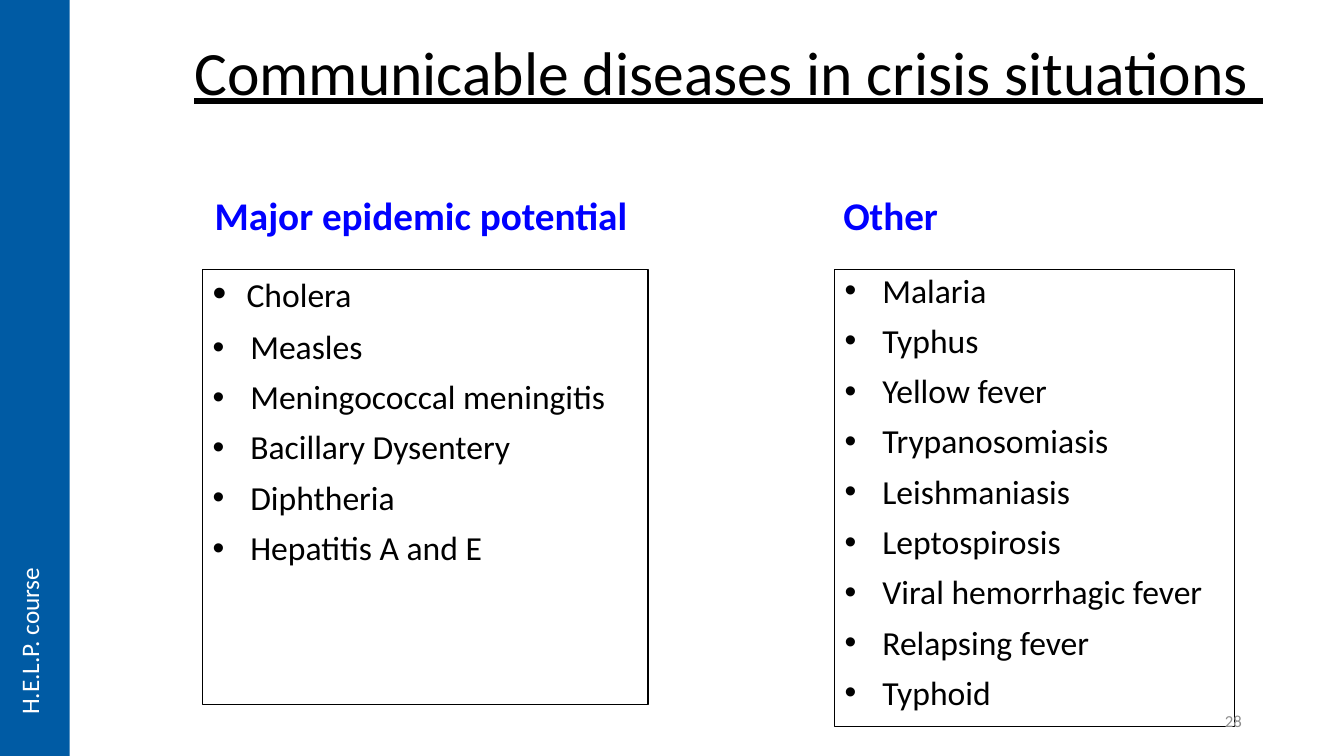
from dataclasses import dataclass

from lxml.etree import SubElement
from pptx import Presentation
from pptx.dml.color import RGBColor
from pptx.enum.shapes import MSO_SHAPE as Shape
from pptx.enum.text import MSO_ANCHOR as Anchor, PP_ALIGN as Align
from pptx.oxml.ns import qn
from pptx.util import Pt


@dataclass(frozen=True)
class Theme:
    font: str = "Calibri"
    black: RGBColor = RGBColor(0, 0, 0)
    heading_blue: RGBColor = RGBColor(0, 0, 255)
    band_blue: RGBColor = RGBColor(0, 0x5B, 0xA4)
    white: RGBColor = RGBColor(255, 255, 255)
    gray: RGBColor = RGBColor(0x8C, 0x8C, 0x8C)
    title: int = 44
    heading: int = 28
    item: int = 24
    band: int = 18
    number: int = 12


THEME = Theme()
PAGE_WIDTH, PAGE_HEIGHT = 960, 540
HEADING_TOP, HEADING_WIDTH, HEADING_HEIGHT = 123.8, 318.2, 50.4
LIST_TOP = 192.2
EPIDEMIC = ["Cholera", "Measles", "Meningococcal meningitis", "Bacillary Dysentery",
            "Diphtheria", "Hepatitis A and E"]
OTHER = ["Malaria", "Typhus", "Yellow fever", "Trypanosomiasis", "Leishmaniasis",
         "Leptospirosis", "Viral hemorrhagic fever", "Relapsing fever", "Typhoid"]


def style(font, size, color):
    font.name = THEME.font
    font.size = Pt(size)
    font.color.rgb = color


def add_text(page, box, text, size, color, align=Align.LEFT, anchor=Anchor.MIDDLE):
    """Add one line of text in box (left, top, width, height) and return its frame."""
    frame = page.shapes.add_textbox(*map(Pt, box)).text_frame
    frame.word_wrap = True
    frame.vertical_anchor = anchor
    frame.text = text
    para = frame.paragraphs[0]
    para.alignment = align
    style(para.runs[0].font, size, color)
    return frame


def add_rectangle(page, box):
    rectangle = page.shapes.add_shape(Shape.RECTANGLE, *map(Pt, box))
    rectangle.shadow.inherit = False
    return rectangle


def add_bullet(para, indent):
    properties = para._p.get_or_add_pPr()
    properties.set("marL", str(Pt(indent)))
    properties.set("indent", str(-Pt(indent)))
    SubElement(properties, qn("a:buFont")).set("typeface", "Arial")
    SubElement(properties, qn("a:buChar")).set("char", "•")


def add_title(page, box):
    frame = add_text(page, box, "Communicable diseases in crisis situations ",
                     THEME.title, THEME.black)
    frame.paragraphs[0].line_spacing = 0.9
    frame.paragraphs[0].runs[0].font.underline = True


def add_heading(page, box, text):
    frame = add_text(page, box, text, THEME.heading, THEME.heading_blue,
                     Align.CENTER, Anchor.BOTTOM)
    frame.paragraphs[0].line_spacing = 0.9
    frame.paragraphs[0].runs[0].font.bold = True


def add_disease_list(page, box, diseases, large_first=False):
    """Add a framed bullet list; large_first enlarges the first bullet."""
    panel = add_rectangle(page, box)
    panel.fill.background()
    panel.line.color.rgb = THEME.black
    panel.line.width = Pt(0.75)
    frame = panel.text_frame
    frame.word_wrap = True
    frame.vertical_anchor = Anchor.TOP
    frame.text = "\n".join(diseases)
    for index, para in enumerate(frame.paragraphs):
        large = large_first and index == 0
        para.alignment = Align.LEFT
        para.line_spacing = 0.9
        if index:
            para.space_before = Pt(10)
        add_bullet(para, 18 if large else 27)
        if large:
            # A bullet takes its size from the first run.
            para.runs[0].text = " "
            para.add_run().text = diseases[0]
        for span in para.runs:
            style(span.font, THEME.item, THEME.black)
        if large:
            para.runs[0].font.size = Pt(THEME.heading)


def add_side_band(page, box):
    left, top, width, height = box
    band = add_rectangle(page, box)
    band.fill.solid()
    band.fill.fore_color.rgb = THEME.band_blue
    band.line.fill.background()
    label_box = (left + 6.5, top + height - 136.1, 36, 113.8)
    frame = add_text(page, label_box, "H.E.L.P. course", THEME.band, THEME.white,
                     anchor=Anchor.TOP)
    frame.word_wrap = False
    frame._txBody.bodyPr.set("vert", "vert270")


def build_disease_slide(page):
    add_title(page, (131.8, 1.4, 828.2, 104.4))
    for left, text in ((144.7, "Major epidemic potential "), (480.2, "Other ")):
        add_heading(page, (left, HEADING_TOP, HEADING_WIDTH, HEADING_HEIGHT), text)
    add_disease_list(page, (144.7, LIST_TOP, 318.2, 311), EPIDEMIC, large_first=True)
    add_disease_list(page, (596.2, LIST_TOP, 285.8, 326.9), OTHER)
    add_side_band(page, (0, 0, 49.7, PAGE_HEIGHT))
    add_text(page, (678.2, 500.4, 216, 28.8), "28", THEME.number, THEME.gray, Align.RIGHT)


def main():
    deck = Presentation()
    deck.slide_width, deck.slide_height = Pt(PAGE_WIDTH), Pt(PAGE_HEIGHT)
    build_disease_slide(deck.slides.add_slide(deck.slide_layouts[6]))
    deck.save("out.pptx")


if __name__ == "__main__":
    main()
